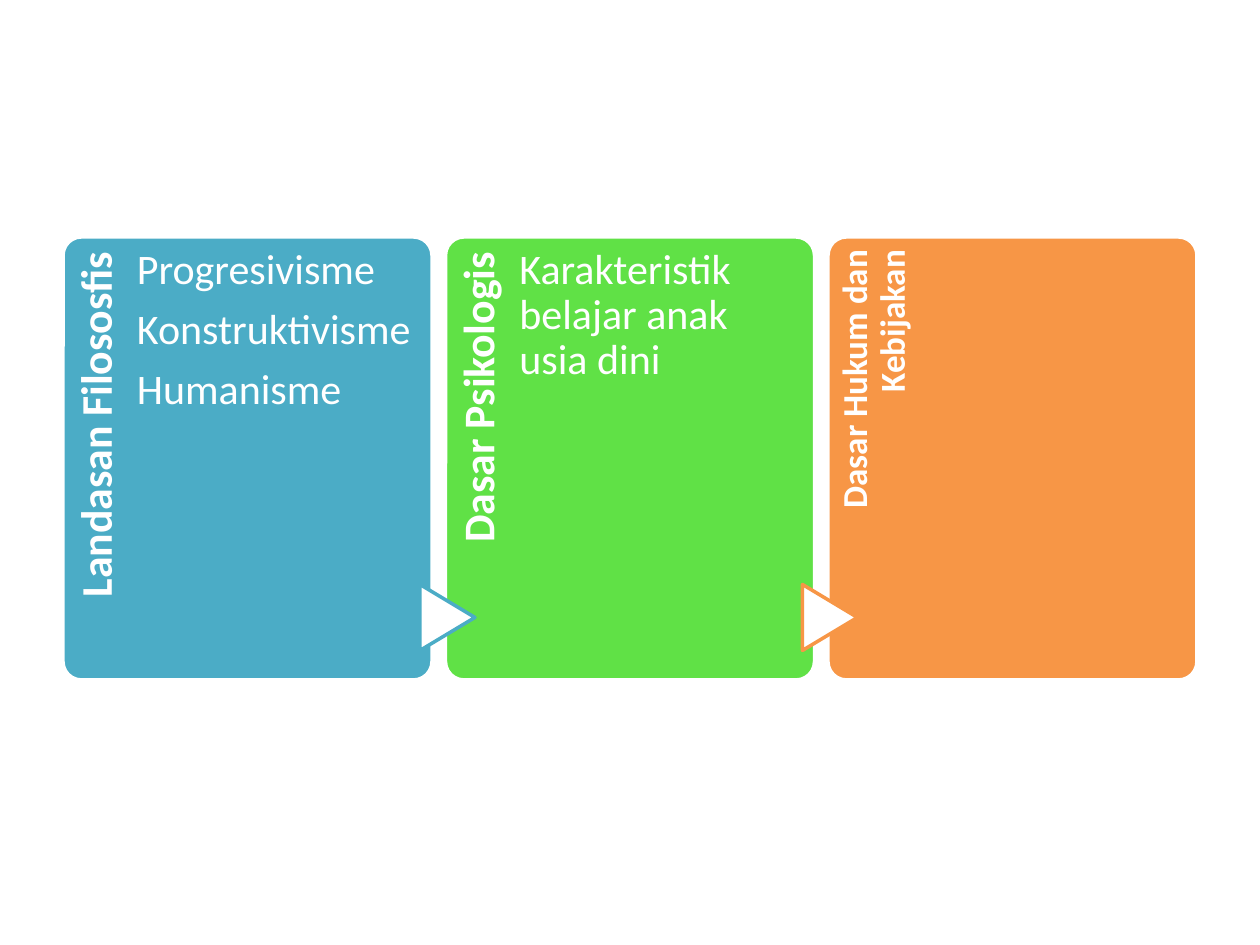
from pptx import Presentation
from pptx.dml.color import RGBColor
from pptx.enum.shapes import MSO_SHAPE
from pptx.enum.text import MSO_ANCHOR, PP_ALIGN
from pptx.util import Emu, Pt

EMU_PER_PX = 914400 / 126
WHITE = "FFFFFF"

# Card grid, in px
CARD_LEFT, CARD_TOP = 63, 237
CARD_WIDTH, CARD_HEIGHT = 369, 443
CARDS_SPAN = 765  # from the first card's left edge to the third's
TITLE_WIDTH, TITLE_HEIGHT = 363, 74

CARDS = [
    {"title": "Landasan Filososfis", "fill": "4BACC6", "size": 25,
     "insets": (0, 11, 15, 0),
     "items": ["Progresivisme", "Konstruktivisme", "Humanisme"]},
    {"title": "Dasar Psikologis", "fill": "60E146", "size": 25,
     "insets": (0, 11, 15, 0), "arrow": "4BACC6",
     "items": ["Karakteristik belajar anak usia dini"]},
    {"title": "Dasar Hukum dan Kebijakan", "fill": "F79646", "size": 20,
     "insets": (0, 9, 13, 0), "arrow": "F79646", "items": []},
]


def px(value):
    return Emu(round(value * EMU_PER_PX))


def color(value):
    return RGBColor.from_string(value)


def apply_format(target, values):
    for name, value in values.items():
        setattr(target, name, value)


def add_outlined(page, kind, bounds, fill, line):
    shape = page.shapes.add_shape(kind, *map(px, bounds))
    shape.shadow.inherit = False
    shape.fill.solid()
    shape.fill.fore_color.rgb = color(fill)
    shape.line.color.rgb = color(line)
    shape.line.width = Pt(2)
    return shape


def add_text(page, bounds, lines, size, insets, bold=False, align=PP_ALIGN.LEFT):
    box = page.shapes.add_textbox(*map(px, bounds))
    frame = box.text_frame
    sides = ("margin_left", "margin_top", "margin_right", "margin_bottom")
    apply_format(frame, dict(zip(sides, map(px, insets))))
    apply_format(frame, {"word_wrap": True, "vertical_anchor": MSO_ANCHOR.TOP})
    for index, line in enumerate(lines):
        para = frame.add_paragraph() if index else frame.paragraphs[0]
        apply_format(para, {"alignment": align, "line_spacing": 0.9,
                            "space_after": Pt(0.35 * size)})
        span = para.add_run()
        span.text = line
        apply_format(span.font, {"name": "Calibri", "size": Pt(size), "bold": bold})
        span.font.color.rgb = color(WHITE)
    return box


def add_card(page, left, card):
    # Rounded panel
    panel = add_outlined(page, MSO_SHAPE.ROUNDED_RECTANGLE,
                         (left, CARD_TOP, CARD_WIDTH, CARD_HEIGHT),
                         card["fill"], WHITE)
    panel.adjustments[0] = 0.05

    # Title turned upward along the left edge
    title_bounds = (left + (TITLE_HEIGHT - TITLE_WIDTH) / 2,
                    CARD_TOP + (TITLE_WIDTH - TITLE_HEIGHT) / 2,
                    TITLE_WIDTH, TITLE_HEIGHT)
    title = add_text(page, title_bounds, [card["title"]], card["size"],
                     card["insets"], bold=True, align=PP_ALIGN.RIGHT)
    title.rotation = 270

    # Arrow pointing in from the previous card
    if "arrow" in card:
        arrow = add_outlined(page, MSO_SHAPE.FLOWCHART_EXTRACT,
                             (left - 31, 590, 66, 55), WHITE, card["arrow"])
        arrow.rotation = 90

    # Items
    if card["items"]:
        add_text(page, (left + TITLE_HEIGHT, CARD_TOP, 275, CARD_HEIGHT),
                 card["items"], 24, (0, 11, 0, 0))


def main():
    deck = Presentation()
    apply_format(deck, {"slide_width": px(1260), "slide_height": px(945)})
    page = deck.slides.add_slide(deck.slide_layouts[6])
    pitch = CARDS_SPAN / (len(CARDS) - 1)
    for index, card in enumerate(CARDS):
        add_card(page, CARD_LEFT + index * pitch, card)
    deck.save("out.pptx")


if __name__ == "__main__":
    main()
